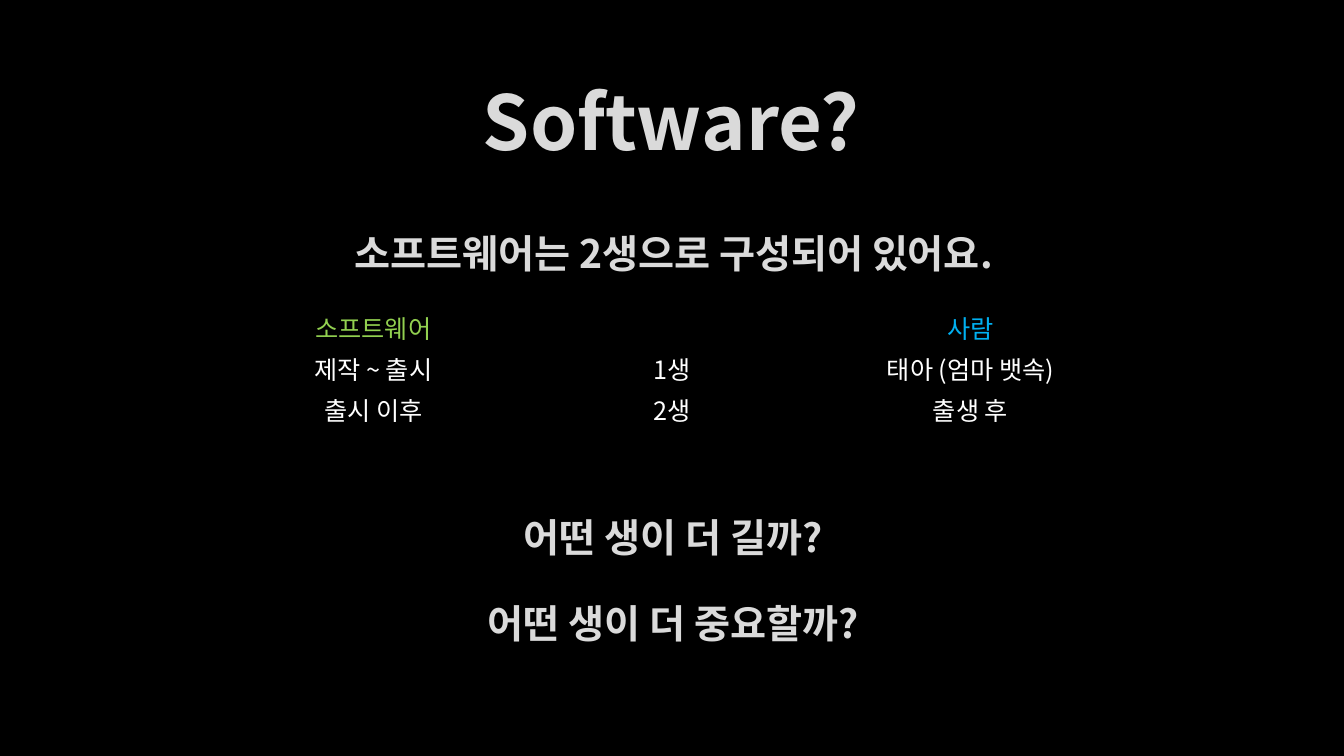
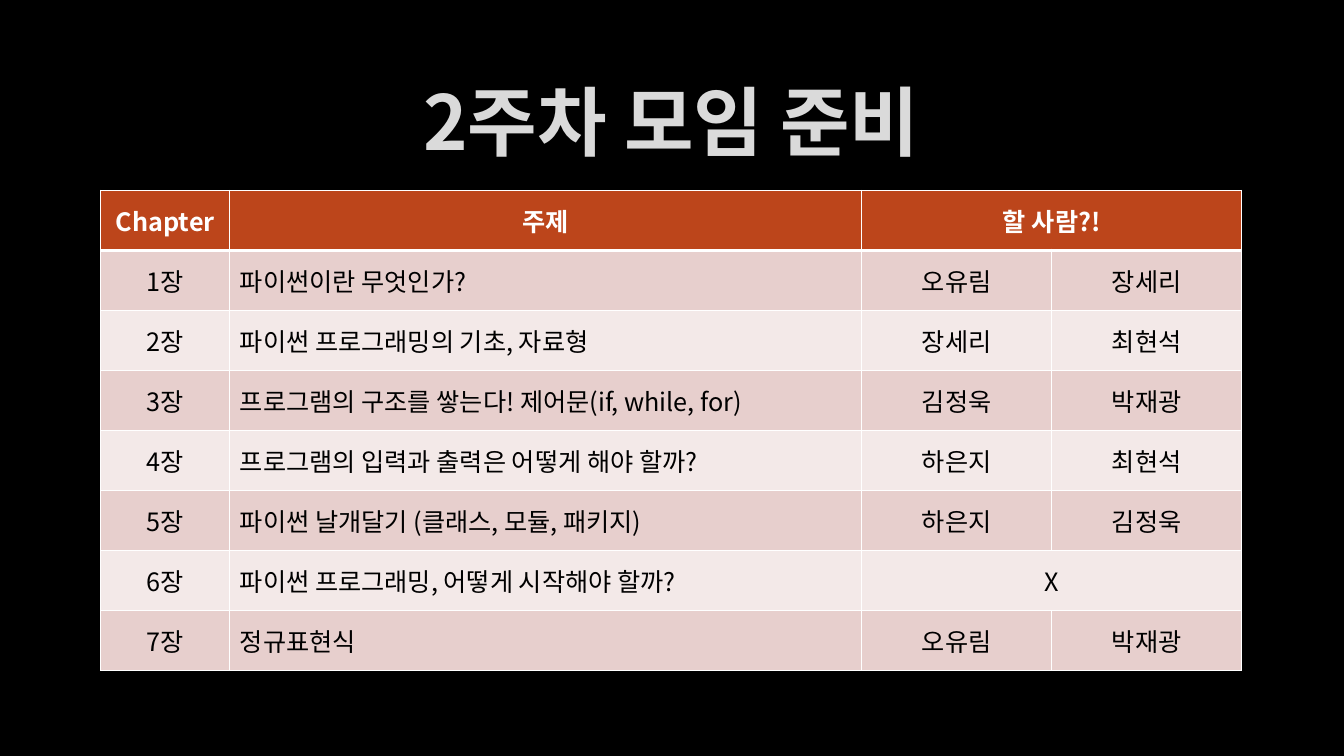
"""Build two dark slides on software life stages and the week 2 meeting plan."""
from lxml.etree import SubElement
from pptx import Presentation
from pptx.dml.color import RGBColor
from pptx.enum.text import MSO_ANCHOR, PP_ALIGN
from pptx.oxml import parse_xml
from pptx.oxml.ns import nsdecls, qn
from pptx.util import Pt

STATEMENT = ["소프트웨어는 2생으로 구성되어 있어요."]
QUESTIONS = ["어떤 생이 더 길까?", "어떤 생이 더 중요할까?"]
LIVES = [
    ("소프트웨어", "", "사람"),
    ("제작 ~ 출시", "1생", "태아 (엄마 뱃속)"),
    ("출시 이후", "2생", "출생 후"),
]
CHAPTERS = [
    ("Chapter", "주제", "할 사람?!"),
    ("1장", "파이썬이란 무엇인가?", "오유림", "장세리"),
    ("2장", "파이썬 프로그래밍의 기초, 자료형", "장세리", "최현석"),
    ("3장", "프로그램의 구조를 쌓는다! 제어문(if, while, for)", "김정욱", "박재광"),
    ("4장", "프로그램의 입력과 출력은 어떻게 해야 할까?", "하은지", "최현석"),
    ("5장", "파이썬 날개달기 (클래스, 모듈, 패키지)", "하은지", "김정욱"),
    ("6장", "파이썬 프로그래밍, 어떻게 시작해야 할까?", "X"),
    ("7장", "정규표현식", "오유림", "박재광"),
]

COLORS = {
    "background": "000000", "heading": "DADADA", "outline": "404040",
    "software": "92D050", "person": "00B0F0", "white": "FFFFFF", "black": "000000",
    "header": "BC451B", "odd": "E7CFCD", "even": "F3E9E8",
}
FONT = "Noto Sans CJK KR"
NO_STYLE = "{2D5ABB26-0587-4C30-8999-92F81FD0307C}"
MARGIN, CONTENT_WIDTH = 72, 815
LIFE_COLUMNS = [213.33] * 3
CHAPTER_COLUMNS = [92.2, 451.4, 135.7, 135.7]


def rgb(name):
    return RGBColor.from_string(COLORS[name])


def add_run(paragraph, text, size, color, bold=False):
    run = paragraph.add_run()
    run.text = text
    run.font.size, run.font.bold, run.font.name = Pt(size), bold, FONT
    run.font.color.rgb = rgb(color)
    properties = run.font._element
    SubElement(properties, qn("a:ea")).set("typeface", FONT)
    return properties


def line_xml(tag, width, color, alpha=100):
    return parse_xml(
        f'<a:{tag} {nsdecls("a")} w="{Pt(width)}"><a:solidFill>'
        f'<a:srgbClr val="{COLORS[color]}"><a:alpha val="{alpha * 1000}"/></a:srgbClr>'
        f'</a:solidFill><a:prstDash val="solid"/></a:{tag}>')


def add_heading(slide, lines, top, height, size):
    frame = slide.shapes.add_textbox(
        Pt(MARGIN), Pt(top), Pt(CONTENT_WIDTH), Pt(height)).text_frame
    frame.word_wrap = True
    frame.vertical_anchor = MSO_ANCHOR.MIDDLE
    for index, line in enumerate(lines):
        paragraph = frame.add_paragraph() if index else frame.paragraphs[0]
        paragraph.alignment = PP_ALIGN.CENTER
        properties = add_run(paragraph, line, size, "heading", True)
        properties.insert(0, line_xml("ln", 0.75, "outline", 10))
    return frame.paragraphs


def add_body(slide, lines, top, height):
    for paragraph in add_heading(slide, lines, top, height, 28):
        paragraph.line_spacing = 1.5
        paragraph.space_before, paragraph.space_after = Pt(5.6), Pt(6)
        paragraph._p.get_or_add_pPr().set("marL", str(Pt(3)))


def add_slide(deck, title):
    slide = deck.slides.add_slide(deck.slide_layouts[6])
    slide.background.fill.solid()
    slide.background.fill.fore_color.rgb = rgb("background")
    add_heading(slide, [title], 48, 76.3, 54)
    return slide


def add_plain_table(slide, row_count, columns, left, top, row_height):
    table = slide.shapes.add_table(
        row_count, len(columns), Pt(left), Pt(top),
        Pt(sum(columns)), Pt(row_height * row_count)).table
    table.first_row = table.horz_banding = False
    table._tbl.tblPr.find(qn("a:tableStyleId")).text = NO_STYLE
    for column, width in zip(table.columns, columns):
        column.width = Pt(width)
    for row in table.rows:
        row.height = Pt(row_height)
    return table


def write_cell(cell, text, color, bold=False, align=PP_ALIGN.CENTER):
    paragraph = cell.text_frame.paragraphs[0]
    paragraph.alignment = align
    if text:
        add_run(paragraph, text, 18, color, bold)


def add_lives(slide):
    table = add_plain_table(slide, len(LIVES), LIFE_COLUMNS, 160, 217.4, 29.33)
    heading_colors = ("software", "white", "person")
    for r, row in enumerate(LIVES):
        for c, text in enumerate(row):
            write_cell(table.cell(r, c), text, "white" if r else heading_colors[c])


def style_chapter_cell(cell, row):
    cell.vertical_anchor = MSO_ANCHOR.MIDDLE
    cell.fill.solid()
    cell.fill.fore_color.rgb = rgb(("odd" if row % 2 else "even") if row else "header")
    widths = {"lnL": 1, "lnR": 1, "lnT": 3 if row == 1 else 1, "lnB": 1 if row else 3}
    for position, (side, width) in enumerate(widths.items()):
        cell._tc.get_or_add_tcPr().insert(position, line_xml(side, width, "white"))


def add_chapters(slide):
    table = add_plain_table(slide, len(CHAPTERS), CHAPTER_COLUMNS, MARGIN, 136, 42.84)
    last = len(CHAPTER_COLUMNS) - 1
    for r, row in enumerate(CHAPTERS):
        for c in range(last + 1):
            style_chapter_cell(table.cell(r, c), r)
        if len(row) == last:
            table.cell(r, last - 1).merge(table.cell(r, last))
        for c, text in enumerate(row):
            align = PP_ALIGN.LEFT if r and c == 1 else PP_ALIGN.CENTER
            write_cell(table.cell(r, c), text, "black" if r else "white", r == 0, align)


def main():
    deck = Presentation()
    deck.slide_width, deck.slide_height = Pt(960), Pt(540)
    software = add_slide(deck, "Software?")
    add_body(software, STATEMENT, 152, 41)
    add_lives(software)
    add_body(software, QUESTIONS, 317.5, 176.4)
    add_chapters(add_slide(deck, "2주차 모임 준비"))
    deck.save("out.pptx")


if __name__ == "__main__":
    main()
